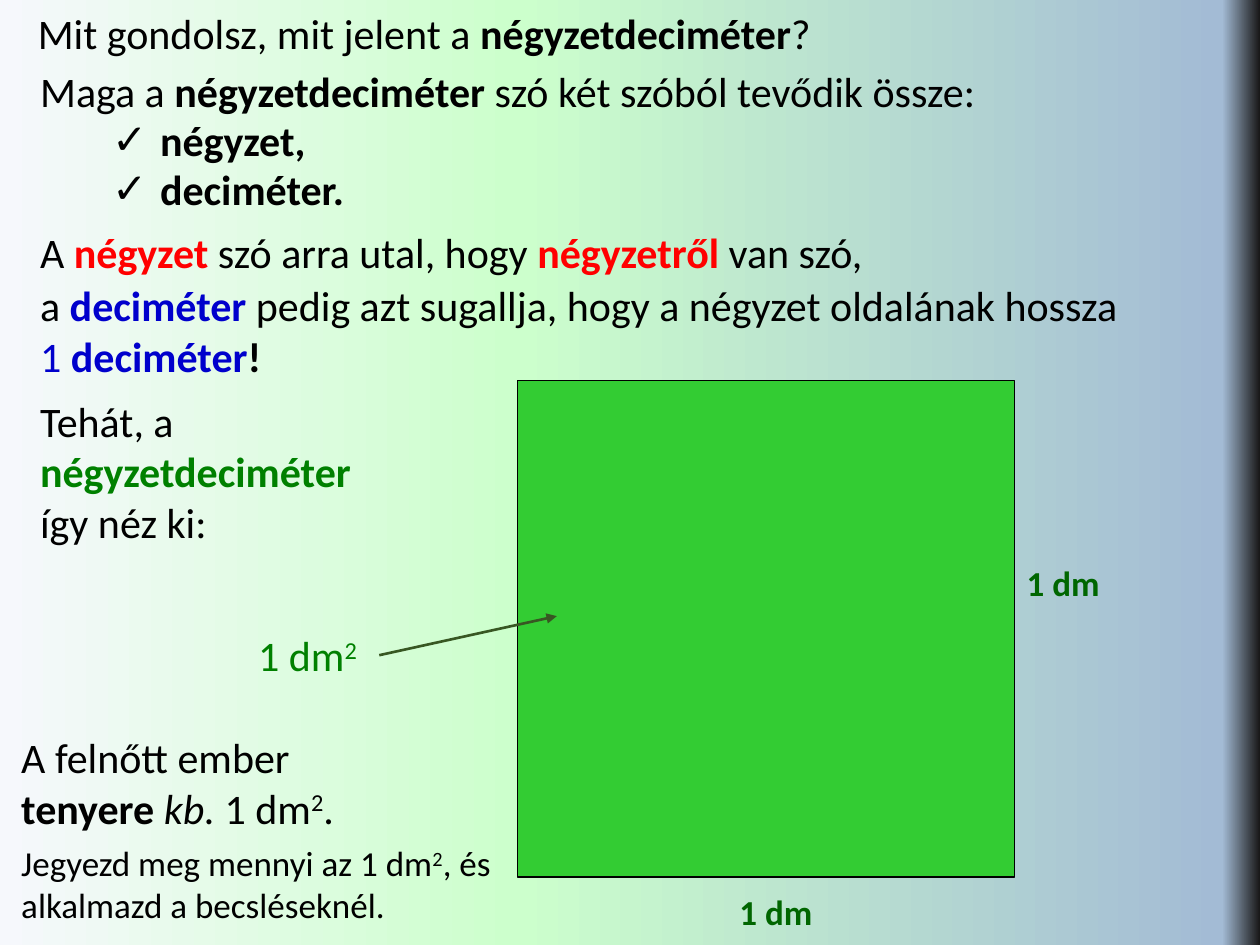
from dataclasses import dataclass

from lxml.etree import SubElement
from pptx import Presentation
from pptx.dml.color import RGBColor
from pptx.enum.shapes import MSO_CONNECTOR, MSO_SHAPE
from pptx.enum.text import MSO_ANCHOR, MSO_AUTO_SIZE, PP_ALIGN
from pptx.oxml.ns import qn
from pptx.util import Inches, Pt


@dataclass(frozen=True)
class Theme:
    font: str = "Calibri"
    body_size: int = 24
    small_size: int = 20
    black: str = "000000"
    red: str = "FF0000"
    blue: str = "0000CC"
    green: str = "008000"
    dark_green: str = "006600"
    square_fill: str = "33CC33"
    arrow: str = "385723"
    background: tuple = ((0, "F6F8FC"), (41, "CCFFCC"), (97, "A3BBD5"), (100, "181717"))


class SlideBuilder:
    """Holds the theme and the current slide."""

    def __init__(self, slide, theme):
        self.slide = slide
        self.theme = theme

    def gradient_background(self):
        fill = self.slide.background.fill
        fill.gradient()
        fill.gradient_angle = 0
        stops = self.slide.element.find(".//" + qn("a:gsLst"))
        for stop in list(stops):
            stops.remove(stop)
        for percent, color in self.theme.background:
            stop = SubElement(stops, qn("a:gs"), pos=str(percent * 1000))
            SubElement(stop, qn("a:srgbClr"), val=color)

    def fill_text(self, shape, paragraphs, size=None, color=None, wrap=False):
        """Each paragraph is a list of (text, marks, color) runs; marks: b, i, ^ (superscript)."""
        frame = shape.text_frame
        frame.word_wrap = wrap
        frame.auto_size = MSO_AUTO_SIZE.NONE
        frame.vertical_anchor = MSO_ANCHOR.TOP
        for index, runs in enumerate(paragraphs):
            paragraph = frame.add_paragraph() if index else frame.paragraphs[0]
            paragraph.alignment = PP_ALIGN.LEFT
            paragraph.space_before = Pt(0)
            paragraph.font.name = self.theme.font
            paragraph.font.size = Pt(size or self.theme.body_size)
            paragraph.font.color.rgb = RGBColor.from_string(color or self.theme.black)
            for text, marks, run_color in runs:
                run = paragraph.add_run()
                run.text = text
                if "b" in marks:
                    run.font.bold = True
                if "i" in marks:
                    run.font.italic = True
                if "^" in marks:
                    run._r.get_or_add_rPr().set("baseline", "30000")
                if run_color:
                    run.font.color.rgb = RGBColor.from_string(run_color)

    def place(self, shape, left, top, width, height):
        shape.left, shape.top = Inches(left), Inches(top)
        shape.width, shape.height = Inches(width), Inches(height)

    def title(self, box, runs):
        shape = self.slide.shapes.title
        self.place(shape, *box)
        self.fill_text(shape, [runs])

    def check_list(self, box, items, line_pitch):
        shape = self.slide.placeholders[1]
        self.place(shape, *box)
        self.fill_text(shape, [[(item, "b", None)] for item in items])
        indent = Inches(0.38)
        for paragraph in shape.text_frame.paragraphs:
            paragraph.line_spacing = Pt(line_pitch)
            properties = paragraph._p.get_or_add_pPr()
            properties.set("marL", str(indent))
            properties.set("indent", str(-indent))
            bullet = properties.makeelement(qn("a:buChar"), {"char": "✓"})
            properties.find(qn("a:defRPr")).addprevious(bullet)

    def text(self, box, paragraphs, **style):
        shape = self.slide.shapes.add_textbox(*map(Inches, box))
        self.fill_text(shape, paragraphs, **style)

    def square(self, left, top, side):
        shape = self.slide.shapes.add_shape(
            MSO_SHAPE.RECTANGLE, Inches(left), Inches(top), Inches(side), Inches(side))
        shape.shadow.inherit = False
        shape.fill.solid()
        shape.fill.fore_color.rgb = RGBColor.from_string(self.theme.square_fill)
        shape.line.color.rgb = RGBColor.from_string(self.theme.black)
        shape.line.width = Pt(0.75)

    def arrow(self, start, end):
        connector = self.slide.shapes.add_connector(
            MSO_CONNECTOR.STRAIGHT, *map(Inches, (*start, *end)))
        connector.line.color.rgb = RGBColor.from_string(self.theme.arrow)
        connector.line.width = Pt(1.5)
        SubElement(connector.line._get_or_add_ln(), qn("a:tailEnd"), type="triangle")
        SubElement(connector._element.spPr, qn("a:effectLst"))


def main():
    presentation = Presentation()
    presentation.slide_width, presentation.slide_height = Inches(10), Inches(7.5)
    slide = presentation.slides.add_slide(presentation.slide_layouts[1])
    theme = Theme()
    builder = SlideBuilder(slide, theme)
    builder.gradient_background()

    # Question and the two parts of the word
    builder.title((0.2, 0.01, 6.39, 0.5), [
        ("Mit gondolsz, mit jelent a ", "", None),
        ("négyzetdeciméter", "b", None), ("?", "", None)])
    builder.text((0.22, 0.47, 7.69, 0.51), [[
        ("Maga a ", "", None), ("négyzetdeciméter", "b", None),
        (" szó két szóból tevődik össze:", "", None)]])
    builder.check_list((0.79, 0.87, 2.06, 0.9), ["négyzet,", "deciméter."], line_pitch=28)

    # Explanation
    builder.text((0.22, 1.75, 6.78, 0.51), [[
        ("A ", "", None), ("négyzet ", "b", theme.red),
        ("szó arra utal, hogy ", "", None), ("négyzetről", "b", theme.red),
        (" van szó,", "", None)]])
    builder.text((0.22, 2.17, 9.61, 0.91), [
        [("a ", "", None), ("deciméter ", "b", theme.blue),
         ("pedig azt sugallja, hogy a négyzet oldalának hossza", "", None)],
        [("1 ", "", theme.blue), ("deciméter", "b", theme.blue), ("!", "b", None)]],
        wrap=True)
    builder.text((0.22, 3.09, 2.77, 1.31), [
        [("Tehát, a", "", None)],
        [("négyzetdeciméter", "b", theme.green)],
        [("így néz ki:", "", None)]])

    # Square decimetre with its side labels
    builder.square(4.11, 3.02, 3.94)
    for left, top in ((5.77, 7.02), (8.05, 4.41)):
        builder.text((left, top, 0.79, 0.44), [[("1 dm", "b", None)]],
                     size=theme.small_size, color=theme.dark_green)

    # Area label pointing into the square
    builder.arrow((3.01, 5.2), (4.42, 4.89))
    builder.text((1.95, 4.95, 1.01, 0.51), [[("1 dm", "", None), ("2", "^", None)]],
                 color=theme.green)

    # Everyday comparison
    builder.text((0.07, 5.76, 2.72, 0.91), [
        [("A felnőtt ember", "", None)],
        [("tenyere ", "b", None), ("kb. ", "i", None), ("1 dm", "", None),
         ("2", "^", None), (".", "", None)]])
    builder.text((0.07, 6.63, 4.05, 0.77), [[
        ("Jegyezd meg mennyi az 1 dm", "", None), ("2", "^", None),
        (", és alkalmazd a becsléseknél.", "", None)]],
        size=theme.small_size, wrap=True)

    presentation.save("out.pptx")


if __name__ == "__main__":
    main()
